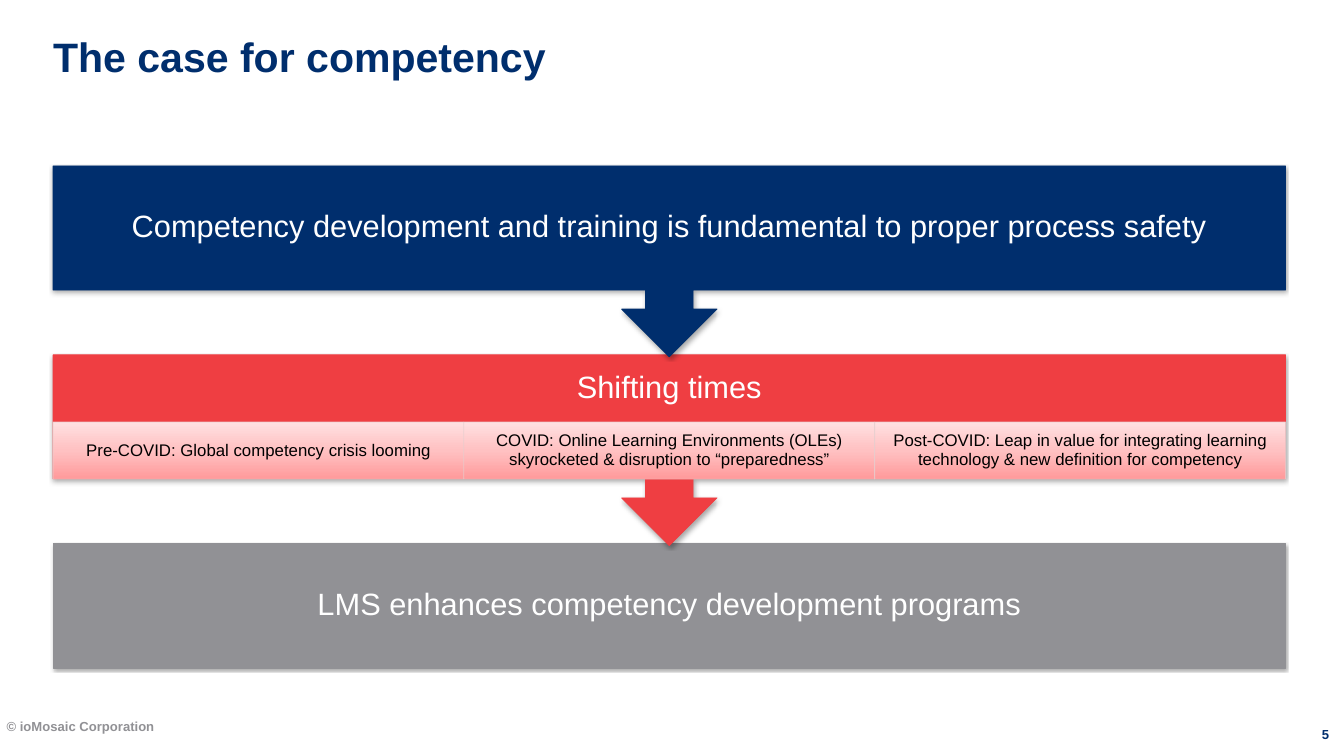
import copy

import lxml.etree
import pptx
import pptx.dml.color
import pptx.enum.shapes
import pptx.enum.text
import pptx.oxml.ns
import pptx.util

Inches = pptx.util.Inches
Pt = pptx.util.Pt
Shape = pptx.enum.shapes.MSO_SHAPE
Align = pptx.enum.text.PP_ALIGN
Anchor = pptx.enum.text.MSO_ANCHOR
qn = pptx.oxml.ns.qn

COLORS = {
    "navy": "002E6D",
    "red": "EF3E42",
    "gray": "919195",
    "white": "FFFFFF",
    "black": "000000",
    "cell_line": "E8D0D0",
}
PINKS = ((0, "FF9A9B"), (0.5, "FFC1C2"), (1, "FFE0E1"))
LEFT, WIDTH = 0.79, 18.34
TOP, BLOCK, STEP = 2.47, 1.85, 2.81
CALLOUT = 2.84
CELL_TOP, CELL_HEIGHT = 6.28, 0.85
PHASES = (
    "Pre-COVID: Global competency crisis looming",
    "COVID: Online Learning Environments (OLEs) skyrocketed & disruption to “preparedness”",
    "Post-COVID: Leap in value for integrating learning technology & new definition for competency",
)


def rgb(value):
    return pptx.dml.color.RGBColor.from_string(value)


class Deck:
    """Holds the style and the current slide, and draws each kind of element."""

    font = "Arial"

    def __init__(self, prs):
        self.s = prs.slides.add_slide(prs.slide_layouts[6])

    def set_text(self, sp, text, size, color, insets, bold=False,
                 align=Align.CENTER, anchor=Anchor.MIDDLE, spacing=1.0):
        tf = sp.text_frame
        tf.word_wrap = True
        tf.vertical_anchor = anchor
        tf.margin_left, tf.margin_top, tf.margin_right, tf.margin_bottom = map(Inches, insets)
        tf.text = text
        p = tf.paragraphs[0]
        p.alignment = align
        p.line_spacing = spacing
        r = p.runs[0]
        r.font.name = self.font
        r.font.size = Pt(size)
        r.font.bold = bold
        r.font.color.rgb = rgb(COLORS[color])

    def label(self, box, text, size, color, insets, align=Align.LEFT, anchor=Anchor.TOP):
        sp = self.s.shapes.add_textbox(*map(Inches, box))
        self.set_text(sp, text, size, color, insets, True, align, anchor)

    def shape(self, kind, box, line):
        sp = self.s.shapes.add_shape(kind, *map(Inches, box))
        sp.shadow.inherit = False
        sp.line.color.rgb = rgb(COLORS[line])
        sp.line.width = Pt(0.75)
        return sp

    def block(self, kind, box, text, color, bottom=0.26):
        sp = self.shape(kind, box, color)
        sp.fill.solid()
        sp.fill.fore_color.rgb = rgb(COLORS[color])
        if kind == Shape.DOWN_ARROW_CALLOUT:
            sp.adjustments[3] = 0.65
        effects = sp._element.spPr.find(qn("a:effectLst"))
        shadow = lxml.etree.SubElement(
            effects, qn("a:outerShdw"), blurRad=str(Pt(3.1)), dist=str(Pt(1.8)),
            dir="5400000", rotWithShape="0")
        tone = lxml.etree.SubElement(shadow, qn("a:srgbClr"), val=COLORS["black"])
        lxml.etree.SubElement(tone, qn("a:alpha"), val="35000")
        self.set_text(sp, text, 33, "white", (0.26, 0.26, 0.26, bottom), spacing=0.9)

    def cell(self, box, text):
        sp = self.shape(Shape.RECTANGLE, box, "cell_line")
        tone = sp._element.spPr.find(qn("a:ln")).find(".//" + qn("a:srgbClr"))
        lxml.etree.SubElement(tone, qn("a:alpha"), val="90000")
        sp.fill.gradient()
        sp.fill.gradient_angle = 90
        stops = sp._element.spPr.find(".//" + qn("a:gsLst"))
        stops.insert(1, copy.deepcopy(stops[0]))
        for stop, (position, color) in zip(sp.fill.gradient_stops, PINKS):
            stop.position = position
            stop.color.rgb = rgb(color)
        self.set_text(sp, text, 18, "black", (0.14, 0.03, 0.14, 0.03), spacing=0.9)


def main():
    prs = pptx.Presentation()
    prs.slide_width, prs.slide_height = Inches(20), Inches(11.25)
    deck = Deck(prs)

    deck.label((LEFT, 0.47, WIDTH, 1.51), "The case for competency", 44, "navy", (0, 0, 0.1, 0))
    deck.label((0, 10.64, 13.34, 0.6), "© ioMosaic Corporation", 14, "gray",
               (0.1, 0.05, 0.1, 0.05))
    deck.label((19.45, 10.7, 0.55, 0.45), "5", 14, "navy", (0, 0, 0, 0),
               Align.CENTER, Anchor.MIDDLE)

    deck.block(Shape.RECTANGLE, (LEFT, TOP + 2 * STEP, WIDTH, BLOCK),
               "LMS enhances competency development programs", "gray")
    deck.block(Shape.DOWN_ARROW_CALLOUT, (LEFT, TOP + STEP, WIDTH, CALLOUT),
               "Shifting times", "red", 0.26 + CELL_HEIGHT)
    cell_width = WIDTH / len(PHASES)
    for i, phase in enumerate(PHASES):
        deck.cell((LEFT + i * cell_width, CELL_TOP, cell_width, CELL_HEIGHT), phase)
    deck.block(Shape.DOWN_ARROW_CALLOUT, (LEFT, TOP, WIDTH, CALLOUT),
               "Competency development and training is fundamental to proper process safety",
               "navy")

    prs.save("out.pptx")


if __name__ == "__main__":
    main()
